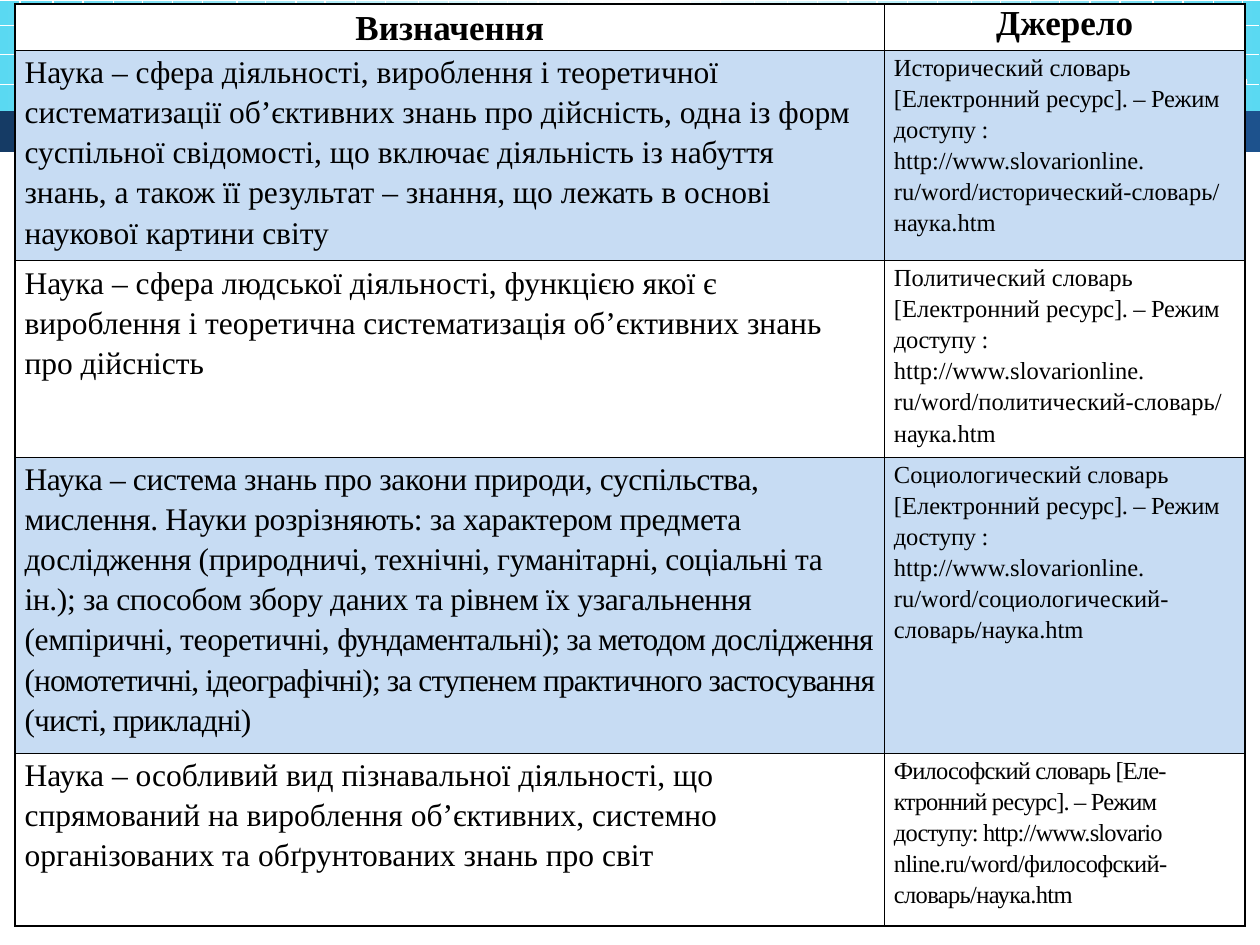
"""Build a slide with a table of definitions of science and their sources."""
import lxml.etree
import pptx
import pptx.dml.color
import pptx.enum.shapes
import pptx.enum.text
import pptx.oxml.ns
import pptx.util

Inches = pptx.util.Inches
FONT = "Times New Roman"
WHITE, BLACK, PALE = "FFFFFF", "000000", "C7DCF3"
COLUMNS = [6.9, 2.86]
ROWS = [0.37, 1.67, 1.56, 2.35, 1.37]
SECTION_STARTS = [0.16, 3.06, 5.99, 8.89]
SECTION_OFFSETS = [0, 0.26, 0.5, 0.74, 0.97, 1.21, 1.45, 1.72, 1.95, 2.19, 2.42, 2.66]
GRID_X = [start + offset for start in SECTION_STARTS for offset in SECTION_OFFSETS
          if start + offset < 10]
GRID_Y = [0.2, 0.43, 0.67, 0.89]
DOT_COLUMNS = {
    0.2: [0, 6, 8, 12, 18, 20, 24, 30, 32, 36],
    0.35: [26],
    0.41: [2, 8, 14, 18, 20, 32, 38],
    0.51: [30],
    0.65: [0, 4, 6, 10, 12, 16, 22, 24, 28, 34, 36, 40],
    0.89: [2, 5, 11, 14, 17, 23, 26, 29, 35, 38],
}


def dictionary(name, word):
    """Return the source paragraphs for one online dictionary."""
    return [[(f"{name} словарь [Електронний ", 0), ("ресурс]. – Режим доступу :", -0.2)],
            [("http://www.slovarionline.", 0)],
            [(f"ru/word/{word}-словарь/наука.htm", 0)]]


ENTRIES = [
    ([[("Наука – сфера діяльності, вироблення і теоретичної систематизації об’єктивних знань "
        "про дійсність, одна із форм суспільної свідомості, що включає діяльність із набуття", 0)],
      [("знань, а також її результат – знання, що лежать в основі наукової картини світу", 0)]],
     dictionary("Исторический", "исторический")),
    ([[("Наука – сфера людської діяльності, функцією якої є вироблення і теоретична "
        "систематизація об’єктивних знань про дійсність", 0)]],
     dictionary("Политический", "политический")),
    ([[("Наука – система знань про закони природи, суспільства, мислення. Науки розрізняють: "
        "за характером предмета дослідження (природничі, технічні, гуманітарні, соціальні та ін.); "
        "за способом збору даних та рівнем їх узагальнення (емпіричні, теоретичні, ", -0.2),
       ("фундаментальні); за методом дослідження (номотетичні, ідеографічні); "
        "за ступенем практичного застосування (чисті, прикладні)", -0.5)]],
     dictionary("Социологический", "социологический")),
    ([[("Наука – особливий вид пізнавальної діяльності, що спрямований на вироблення "
        "об’єктивних, системно організованих та обґрунтованих знань про світ", 0)]],
     [[("Философский словарь [Еле-ктронний ресурс]. – Режим доступу: http://www.slovario ", -0.5),
       ("nline.ru/word/философский-словарь/наука.htm", -0.4)]]),
]


def color(value):
    """Turn a hex string into a colour."""
    return pptx.dml.color.RGBColor.from_string(value)


def add_element(parent, tag, **attributes):
    """Append a DrawingML element to a parent."""
    return lxml.etree.SubElement(parent, pptx.oxml.ns.qn(tag), attributes)


def add_plain_shape(page, kind, left, top, width, height):
    """Add a preset shape without shadow or outline."""
    shape = page.shapes.add_shape(kind, Inches(left), Inches(top), Inches(width), Inches(height))
    shape.shadow.inherit = False
    shape.line.fill.background()
    return shape


def add_band(page, top, height, colors):
    """Add a full-width band with an evenly spaced horizontal gradient."""
    band = add_plain_shape(page, pptx.enum.shapes.MSO_SHAPE.RECTANGLE, 0, top, 10, height)
    band.fill.gradient()
    band.fill.gradient_angle = 0
    stops = band._element.spPr.find(".//" + pptx.oxml.ns.qn("a:gsLst"))
    for stop in list(stops):
        stops.remove(stop)
    for index, value in enumerate(colors):
        position = 100000 * index // (len(colors) - 1)
        stop = add_element(stops, "a:gs", pos=str(position))
        add_element(stop, "a:srgbClr", val=value)


def add_dot(page, x, y):
    """Add a white dot centred on a grid point."""
    dot = add_plain_shape(page, pptx.enum.shapes.MSO_SHAPE.OVAL, x - 0.04, y - 0.04, 0.08, 0.08)
    dot.fill.solid()
    dot.fill.fore_color.rgb = color(WHITE)


def add_line(page, x1, y1, x2, y2):
    """Add a thin white grid line."""
    line = page.shapes.add_connector(pptx.enum.shapes.MSO_CONNECTOR.STRAIGHT,
                                     Inches(x1), Inches(y1), Inches(x2), Inches(y2))
    line.line.color.rgb = color(WHITE)
    line.line.width = pptx.util.Pt(0.75)
    add_element(line._element.spPr, "a:effectLst")


def add_grid(page):
    """Add the white grid and its dots over the top band."""
    for y, columns in DOT_COLUMNS.items():
        for column in columns:
            add_dot(page, GRID_X[column], y)
    for x in GRID_X:
        add_line(page, x, 0, x, 1.1)
    for y in GRID_Y:
        add_line(page, -0.01, y, 9.99, y)


def style_cell(cell, fill):
    """Set the margins, borders and fill of a cell."""
    cell.margin_left = cell.margin_right = pptx.util.Pt(5.4)
    cell.margin_top = cell.margin_bottom = 0
    properties = cell._tc.get_or_add_tcPr()
    for side in ("a:lnL", "a:lnR", "a:lnT", "a:lnB"):
        border = add_element(properties, side, w="12700")
        add_element(add_element(border, "a:solidFill"), "a:srgbClr", val=BLACK)
    cell.fill.solid()
    cell.fill.fore_color.rgb = color(fill)


def write_cell(cell, paragraphs, size, bold=False, spacing=1.15):
    """Write paragraphs of (text, letter spacing) pairs into a cell."""
    frame = cell.text_frame
    for index, parts in enumerate(paragraphs):
        para = frame.add_paragraph() if index else frame.paragraphs[0]
        para.line_spacing = spacing
        if bold:
            para.alignment = pptx.enum.text.PP_ALIGN.CENTER
        for text, tracking in parts:
            span = para.add_run()
            span.text = text
            span.font.name = FONT
            span.font.size = pptx.util.Pt(size)
            span.font.bold = bold
            span.font.color.rgb = color(BLACK)
            if tracking:
                span._r.get_or_add_rPr().set("spc", str(round(tracking * 100)))


def add_definitions(page):
    """Add the table of definitions and sources."""
    frame = page.shapes.add_table(len(ROWS), len(COLUMNS), Inches(0.12), Inches(0.03),
                                  Inches(sum(COLUMNS)), Inches(7.5))
    table = frame.table
    table.first_row = table.horz_banding = False
    for column, width in zip(table.columns, COLUMNS):
        column.width = Inches(width)
    for index, height in enumerate(ROWS):
        table.rows[index].height = Inches(height)
        for cell in table.rows[index].cells:
            style_cell(cell, PALE if index % 2 else WHITE)
    frame.height = Inches(7.5)
    write_cell(table.cell(0, 0), [[("Визначення", 0)]], 20, bold=True)
    write_cell(table.cell(0, 1), [[("Джерело", 0)]], 20, bold=True, spacing=1.0)
    for index, (definition, source) in enumerate(ENTRIES, start=1):
        write_cell(table.cell(index, 0), definition, 18)
        write_cell(table.cell(index, 1), source, 14)


def main():
    """Build and save the deck."""
    deck = pptx.Presentation()
    deck.slide_width, deck.slide_height = Inches(10), Inches(7.5)
    page = deck.slides.add_slide(deck.slide_layouts[6])
    add_band(page, 0.01, 1.02, ["5AD9F2", WHITE, "5AD9F2"])
    add_grid(page)
    add_band(page, 0.88, 0.33, ["153B65", "1D528D"])
    add_definitions(page)
    deck.save("out.pptx")


if __name__ == "__main__":
    main()
